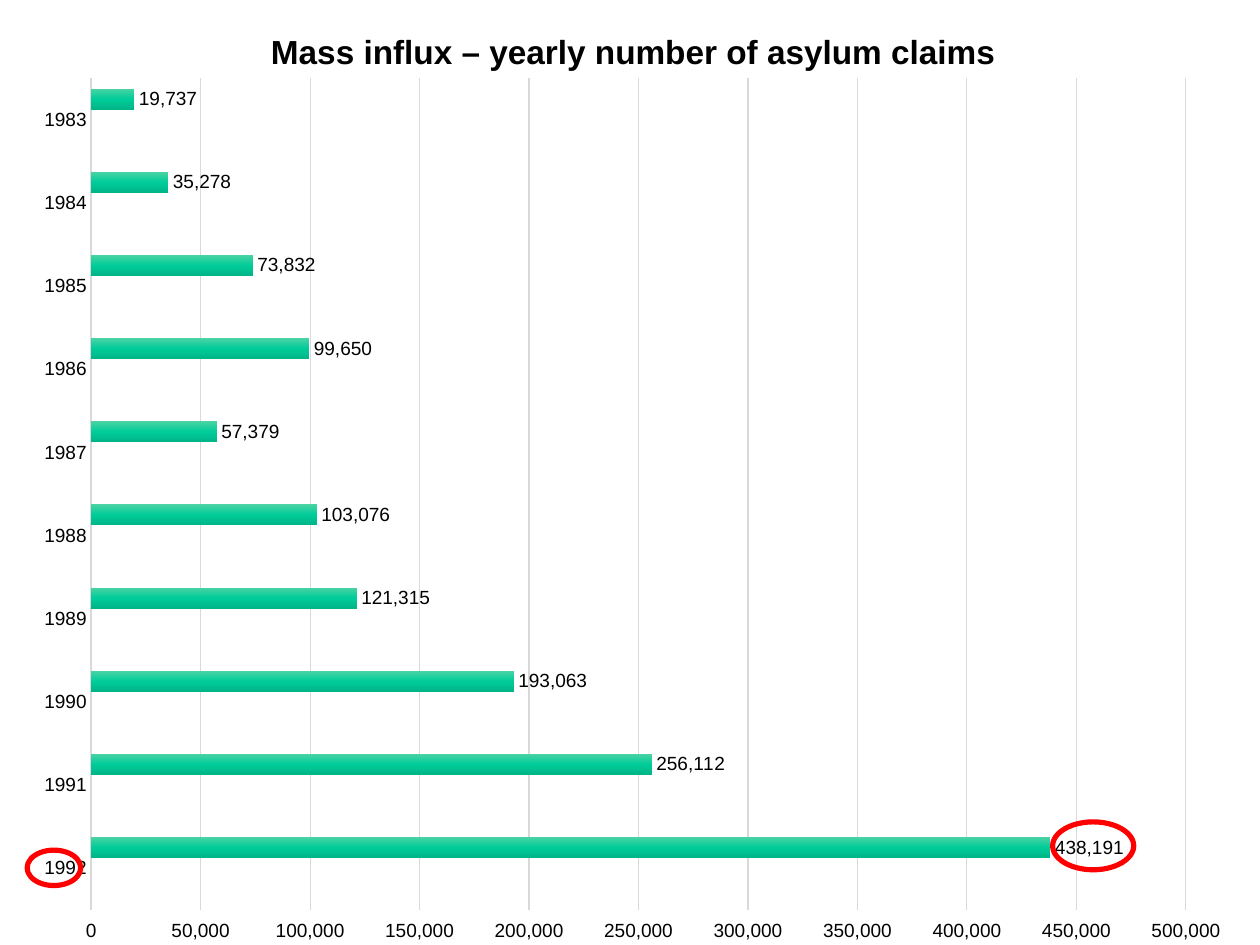
from pptx import Presentation
from pptx.chart.data import CategoryChartData as ChartData
from pptx.dml.color import RGBColor as RGB
from pptx.enum.chart import XL_CHART_TYPE as Kind
from pptx.enum.chart import XL_LABEL_POSITION as Spot
from pptx.enum.chart import XL_TICK_LABEL_POSITION as Side
from pptx.enum.chart import XL_TICK_MARK as Tick
from pptx.enum.shapes import MSO_SHAPE as Shape
from pptx.oxml import parse_xml
from pptx.oxml.ns import nsdecls
from pptx.util import Pt

# Content
TITLE = "Mass influx – yearly number of asylum claims"
CLAIMS = {
    "1983": 19737, "1984": 35278, "1985": 73832, "1986": 99650,
    "1987": 57379, "1988": 103076, "1989": 121315, "1990": 193063,
    "1991": 256112, "1992": 438191,
}
EMPTY = [None] * len(CLAIMS)
SERIES = [("Series 1", list(CLAIMS.values())), ("Series 2", EMPTY), ("Series 3", EMPTY)]
RINGS = [(663.1, 517.7, 51.1, 30.2), (17.1, 535.5, 33.8, 22.3)]

# Theme
THEME = {
    "font": "Arial", "title": 21, "label": 12,
    "text": RGB(0, 0, 0), "grid": RGB(0xD9, 0xD9, 0xD9), "ring": RGB(0xFF, 0, 0),
    "bars": [
        ("4BD3A4", "00CC99", "00B588"),
        ("5757D3", "2B2BD4", "2020C3"),
        ("FFFFFF", "FFFFFF", "E3E3E3"),
    ],
}

# Geometry
WIDE, HIGH = 793.75, 595.25
FRAME = (16.9, 0, 765.4, HIGH)
PLOT = {"x": 0.053, "y": 0.083, "w": 0.901, "h": 0.88}
HEAD = {"x": 0.196, "y": 0.026}


def style(font, size, bold=False):
    font.name, font.size, font.bold = THEME["font"], Pt(size), bold
    font.color.rgb = THEME["text"]


def layout(spot, inner=False):
    parts = '<c:layoutTarget val="inner"/>' if inner else ""
    parts += "".join(f'<c:{key}Mode val="edge"/>' for key in "xy")
    parts += "".join(f'<c:{key} val="{val}"/>' for key, val in spot.items())
    return parse_xml(f'<c:layout {nsdecls("c")}><c:manualLayout>{parts}'
                     "</c:manualLayout></c:layout>")


def place(node, new):
    for old in node.findall(new.tag):
        node.remove(old)
    return new


def shade(tones):
    stops = "".join(f'<a:gs pos="{i * 50000}"><a:srgbClr val="{tone}"/></a:gs>'
                    for i, tone in enumerate(tones))
    return parse_xml(f'<a:gradFill {nsdecls("a")} rotWithShape="1"><a:gsLst>{stops}'
                     '</a:gsLst><a:lin ang="5400000" scaled="0"/></a:gradFill>')


def add_bars(slide):
    data = ChartData(number_format="#,##0")
    data.categories = list(CLAIMS)
    for name, vals in SERIES:
        data.add_series(name, vals)
    chart = slide.shapes.add_chart(Kind.BAR_CLUSTERED, *map(Pt, FRAME), data).chart
    style(chart.font, 10)
    chart.has_legend = False

    # Title and plot area
    chart.has_title = True
    title = chart.chart_title
    title.text_frame.text = TITLE
    style(title.text_frame.paragraphs[0].runs[0].font, THEME["title"], True)
    title.include_in_layout = False
    node = title._element
    node.tx.addnext(place(node, layout(HEAD)))
    area = chart._chartSpace.chart.plotArea
    area.insert(0, place(area, layout(PLOT, True)))

    # Axes
    years, count = chart.category_axis, chart.value_axis
    for axis in (years, count):
        style(axis.tick_labels.font, THEME["label"])
        axis.major_tick_mark = axis.minor_tick_mark = Tick.NONE
    years.reverse_order = True
    count.tick_label_position = Side.HIGH
    count.minimum_scale, count.maximum_scale, count.major_unit = 0, 500000, 50000
    count.tick_labels.number_format = "#,##0"
    count.tick_labels.number_format_is_linked = False
    count.format.line.fill.background()
    count.has_major_gridlines = True
    for line, width in ((years.format.line, 1), (count.major_gridlines.format.line, 0.75)):
        line.color.rgb, line.width = THEME["grid"], Pt(width)

    # Bars and values
    plot = chart.plots[0]
    plot.gap_width, plot.overlap, plot.vary_by_categories = 100, 0, False
    for bar, tones in zip(plot.series, THEME["bars"]):
        bar.invert_if_negative = False
        bar._element.get_or_add_spPr().insert(0, shade(tones))
        label = bar.data_labels
        label.show_value, label.position = True, Spot.OUTSIDE_END
        style(label.font, THEME["label"])


def add_ring(slide, box):
    ring = slide.shapes.add_shape(Shape.OVAL, *map(Pt, box))
    ring.shadow.inherit = False
    ring.fill.background()
    ring.line.color.rgb, ring.line.width = THEME["ring"], Pt(3.25)


def main():
    deck = Presentation()
    deck.slide_width, deck.slide_height = Pt(WIDE), Pt(HIGH)
    slide = deck.slides.add_slide(deck.slide_layouts[6])
    add_bars(slide)
    for box in RINGS:
        add_ring(slide, box)
    deck.save("out.pptx")


if __name__ == "__main__":
    main()
